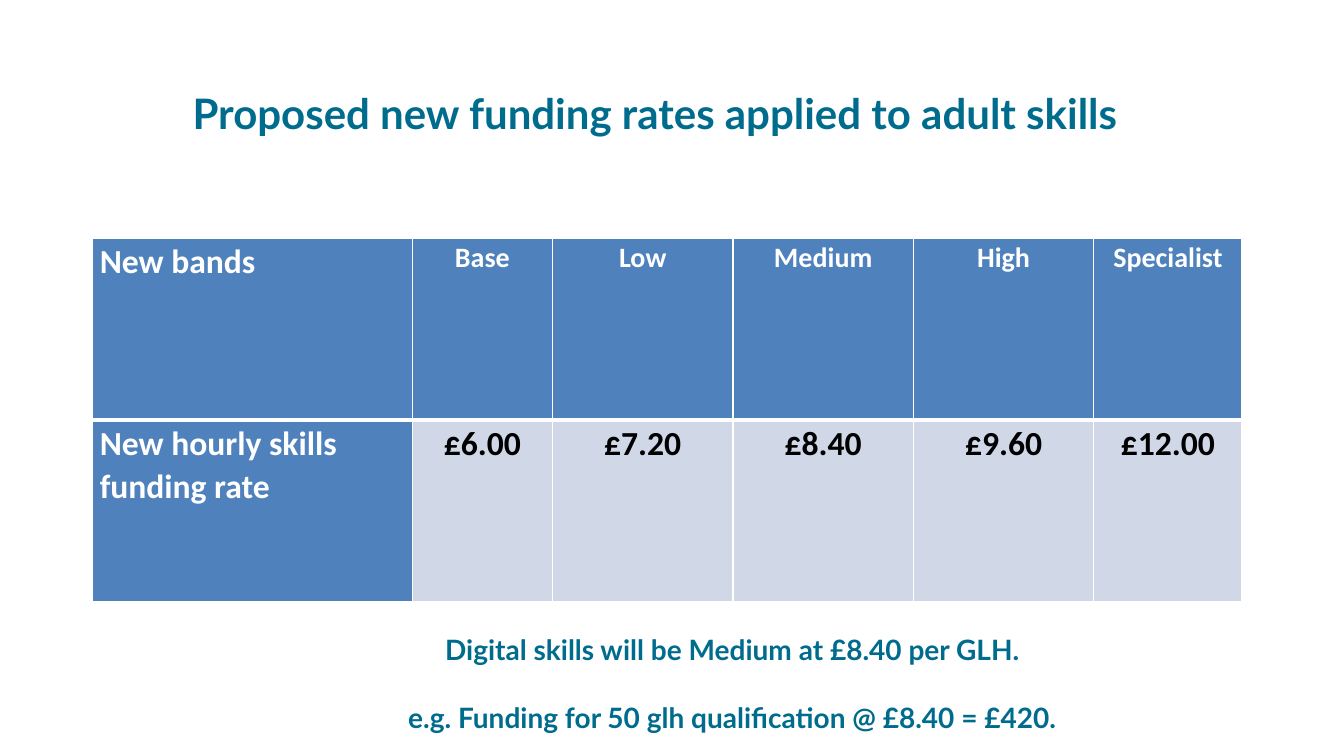
from pptx import Presentation
from pptx.dml.color import RGBColor
from pptx.enum.text import MSO_ANCHOR, MSO_AUTO_SIZE, PP_ALIGN
from pptx.oxml import parse_xml
from pptx.oxml.ns import nsdecls
from pptx.util import Inches, Pt

TEAL = RGBColor(0x00, 0x6C, 0x8D)
BLUE = RGBColor(0x4F, 0x81, 0xBD)
PALE = RGBColor(0xD0, 0xD8, 0xE8)
WHITE = RGBColor(0xFF, 0xFF, 0xFF)
BLACK = RGBColor(0x00, 0x00, 0x00)

RATES = [
    ["New bands", "Base", "Low", "Medium", "High", "Specialist"],
    ["New hourly skills funding rate", "£6.00", "£7.20", "£8.40", "£9.60", "£12.00"],
]
NOTES = [
    "Digital skills will be Medium at £8.40 per GLH.",
    "e.g. Funding for 50 glh qualification @ £8.40 = £420.",
]


class SlideBuilder:
    text_font = "Lato"
    table_font = "Calibri"

    def __init__(self, prs):
        self.s = prs.slides.add_slide(prs.slide_layouts[5])

    def add_text(self, p, text, size, font, color, align, spacing):
        p.alignment = align
        p.line_spacing = spacing
        r = p.add_run()
        r.text = text
        r.font.name = font
        r.font.size = Pt(size)
        r.font.bold = True
        r.font.color.rgb = color

    def title(self, text, left, top, width, height):
        sp = self.s.shapes.title
        sp.left, sp.top = Inches(left), Inches(top)
        sp.width, sp.height = Inches(width), Inches(height)
        tf = sp.text_frame
        tf.word_wrap = True
        tf.auto_size = MSO_AUTO_SIZE.NONE
        tf.vertical_anchor = MSO_ANCHOR.MIDDLE
        self.add_text(tf.paragraphs[0], text, 30, self.text_font, TEAL, PP_ALIGN.LEFT, 0.9)

    def notes(self, lines, left, top, width, height):
        sp = self.s.shapes.add_textbox(Inches(left), Inches(top), Inches(width), Inches(height))
        tf = sp.text_frame
        tf.word_wrap = True
        for i, line in enumerate(lines):
            p = tf.add_paragraph() if i else tf.paragraphs[0]
            p.space_before = Pt(10 if i else 0)
            p.space_after = Pt(5)
            self.add_text(p, line, 20, self.text_font, TEAL, PP_ALIGN.CENTER, 1.4)

    def borders(self, cell, **widths):
        tc_pr = cell._tc.get_or_add_tcPr()
        for i, (side, width) in enumerate(widths.items()):
            tc_pr.insert(i, parse_xml(
                f'<a:ln{side} {nsdecls("a")} w="{Pt(width)}"><a:solidFill>'
                f'<a:srgbClr val="{WHITE}"/></a:solidFill></a:ln{side}>'))

    def cell(self, cell, text, row, col):
        header = row == 0 or col == 0
        cell.margin_left = cell.margin_right = Inches(0.07)
        cell.margin_top = cell.margin_bottom = 0
        cell.fill.solid()
        cell.fill.fore_color.rgb = BLUE if header else PALE
        self.borders(cell, L=1, R=1, T=3 if row else 1, B=1 if row else 3)
        p = cell.text_frame.paragraphs[0]
        p.space_after = Pt(8)
        size = 20 if row == 0 and col else 24
        align = PP_ALIGN.CENTER if col else PP_ALIGN.LEFT
        self.add_text(p, text, size, self.table_font, WHITE if header else BLACK, align, 1.07)

    def table(self, rows, left, top, widths, row_height):
        frame = self.s.shapes.add_table(
            len(rows), len(widths), Inches(left), Inches(top),
            Inches(sum(widths)), Inches(row_height * len(rows)))
        table = frame.table
        for column, width in zip(table.columns, widths):
            column.width = Inches(width)
        for i, texts in enumerate(rows):
            table.rows[i].height = Inches(row_height)
            for j, text in enumerate(texts):
                self.cell(table.cell(i, j), text, i, j)


def main():
    prs = Presentation()
    prs.slide_width, prs.slide_height = Inches(13.33), Inches(7.5)
    slide = SlideBuilder(prs)
    slide.title("Proposed new funding rates applied to adult skills", 1.81, 0.42, 10.87, 1.45)
    slide.table(RATES, 0.92, 2.37, [3.17, 1.39, 1.79, 1.79, 1.79, 1.47], 1.8)
    slide.notes(NOTES, 1.85, 6.09, 10.83, 0.99)
    prs.save("out.pptx")


if __name__ == "__main__":
    main()
